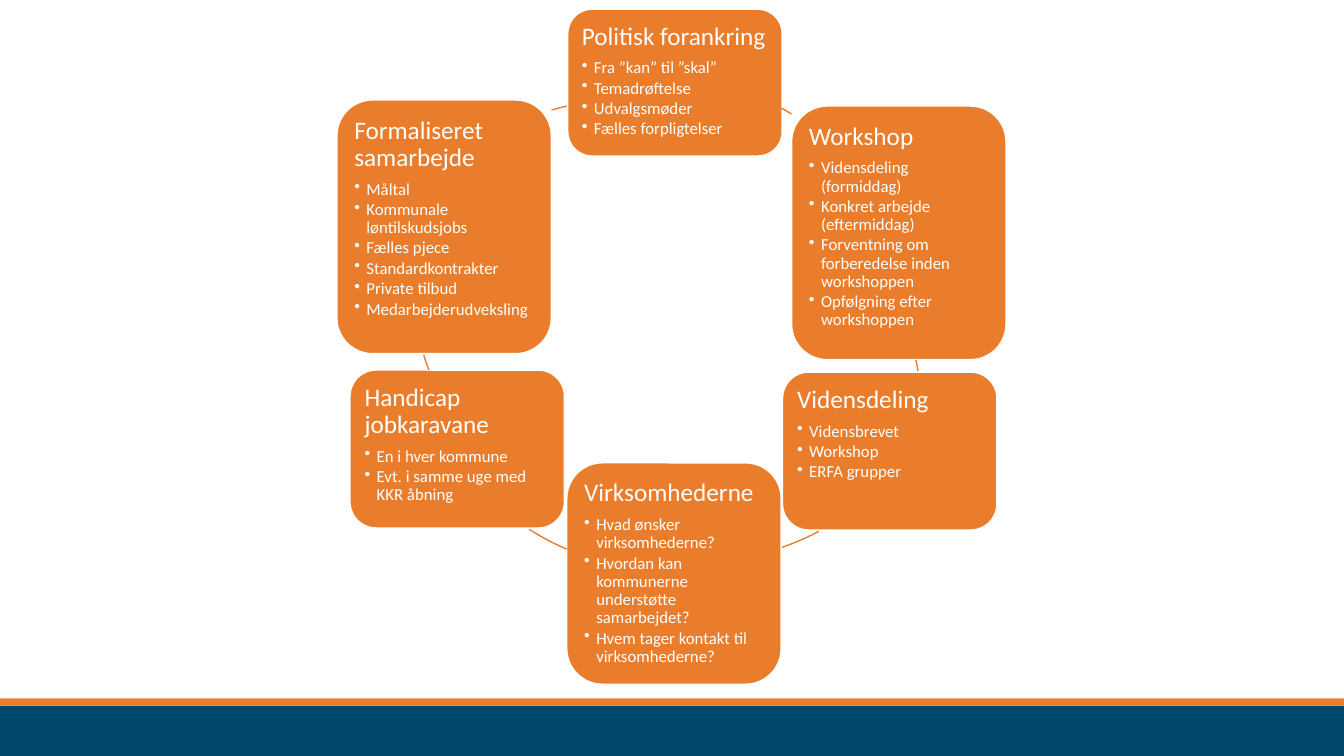
from math import atan2, degrees

from lxml.etree import SubElement
from pptx import Presentation
from pptx.dml.color import RGBColor as RGB
from pptx.enum.shapes import MSO_SHAPE as SHAPE
from pptx.enum.text import MSO_ANCHOR as ANCHOR, PP_ALIGN as ALIGN
from pptx.oxml.ns import qn
from pptx.util import Emu, Pt

THEME = {
    "orange": RGB.from_string("E97D2C"),
    "navy": RGB.from_string("00496A"),
    "white": RGB.from_string("FFFFFF"),
    "font": "Calibri",
    "title": Pt(18),
    "bullet": Pt(12),
    "title_gap": Pt(6.3),
    "bullet_gap": Pt(1.6),
    "outline": Pt(1.25),
    "arc": Pt(1),
}
PX = 9144
BOX_W = 213
RING = 488
INSET = 7
INDENT = 12

prs = Presentation()
prs.slide_width, prs.slide_height = Emu(1333 * PX), Emu(750 * PX)
s = prs.slides.add_slide(prs.slide_layouts[6])


def add_shape(kind, x, y, w, h, fill=None, line=None, width=None):
    sp = s.shapes.add_shape(kind, *(Emu(v * PX) for v in (x, y, w, h)))
    sp.shadow.inherit = False
    if fill is None:
        sp.fill.background()
    else:
        sp.fill.solid()
        sp.fill.fore_color.rgb = fill
    if line is None:
        sp.line.fill.background()
    else:
        sp.line.color.rgb = line
        sp.line.width = width
    return sp


def add_text(p, text, size, gap):
    p.alignment = ALIGN.LEFT
    p.line_spacing = 0.9
    p.space_after = gap
    r = p.add_run()
    r.text = text
    r.font.name = THEME["font"]
    r.font.size = size
    r.font.color.rgb = THEME["white"]


add_shape(SHAPE.RECTANGLE, 0, 700, 1333, 50, THEME["navy"])
add_shape(SHAPE.RECTANGLE, 0, 693, 1333, 7, THEME["orange"])

# box: left, top, height; arc: ring left, ring top, start point, end point
steps = [
    ("Politisk forankring", (563, 9, 146), (415, 78, (775, 107), (785, 113)),
     ["Fra ”kan” til ”skal”", "Temadrøftelse", "Udvalgsmøder", "Fælles forpligtelser"]),
    ("Workshop", (785, 105, 252), (426, 165, (909, 357), (911, 369)),
     ["Vidensdeling (formiddag)", "Konkret arbejde (eftermiddag)",
      "Forventning om forberedelse inden workshoppen", "Opfølgning efter workshoppen"]),
    ("Vidensdeling", (776, 369, 157), (453, 68, (812, 527), (775, 543)),
     ["Vidensbrevet", "Workshop", "ERFA grupper"]),
    ("Virksomhederne", (562, 459, 220), (413, 76, (562, 545), (525, 525)),
     ["Hvad ønsker virksomhederne?", "Hvordan kan kommunerne understøtte samarbejdet?",
      "Hvem tager kontakt til virksomhederne?"]),
    ("Handicap jobkaravane", (347, 367, 157), (410, 38, (426, 367), (420, 351)),
     ["En i hver kommune", "Evt. i samme uge med KKR åbning"]),
    ("Formaliseret samarbejde", (334, 99, 252), (373, 99, (547, 109), (562, 105)),
     ["Måltal", "Kommunale løntilskudsjobs", "Fælles pjece", "Standardkontrakter",
      "Private tilbud", "Medarbejderudveksling"]),
]

for title, (x, y, h), (ring_x, ring_y, start, end), bullets in steps:
    box = add_shape(SHAPE.ROUNDED_RECTANGLE, x, y, BOX_W, h,
                    THEME["orange"], THEME["white"], THEME["outline"])
    tf = box.text_frame
    tf.word_wrap = True
    tf.vertical_anchor = ANCHOR.TOP
    tf.margin_left = tf.margin_right = tf.margin_top = tf.margin_bottom = Emu(INSET * PX)
    add_text(tf.paragraphs[0], title, THEME["title"], THEME["title_gap"])
    for bullet in bullets:
        p = tf.add_paragraph()
        p.level = 1
        add_text(p, bullet, THEME["bullet"], THEME["bullet_gap"])
        pPr = p._p.get_or_add_pPr()
        pPr.set("marL", str(INDENT * PX))
        pPr.set("indent", str(-INDENT * PX))
        SubElement(pPr, qn("a:buChar"), char="•")

    arc = add_shape(SHAPE.ARC, ring_x, ring_y, RING, RING,
                    line=THEME["orange"], width=THEME["arc"])
    for i, (px, py) in enumerate((start, end)):
        angle = degrees(atan2(py - ring_y - RING / 2, px - ring_x - RING / 2)) % 360
        arc.adjustments[i] = angle * 0.6

prs.save("out.pptx")
